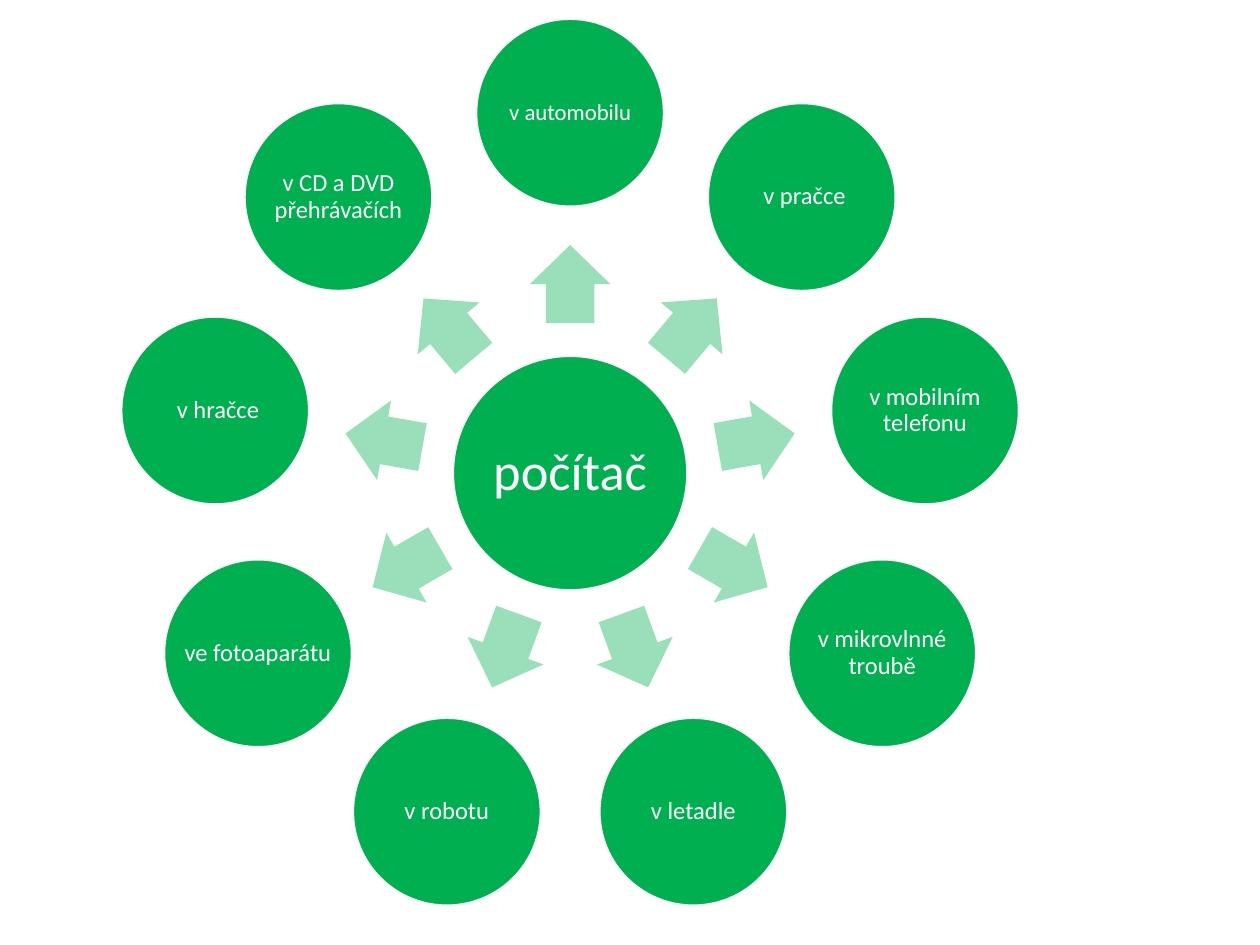
"""Radial diagram: a computer in the centre and nine places where one is found."""
from math import cos, radians, sin

from lxml import etree
from pptx import Presentation
from pptx.dml.color import RGBColor
from pptx.enum.shapes import MSO_SHAPE
from pptx.enum.text import MSO_ANCHOR, PP_ALIGN
from pptx.oxml.ns import qn
from pptx.util import Inches, Pt

OVAL = MSO_SHAPE.OVAL
RIGHT_ARROW = MSO_SHAPE.RIGHT_ARROW
MIDDLE = MSO_ANCHOR.MIDDLE
CENTER = PP_ALIGN.CENTER

COLORS = {"green": "00B050", "white": "FFFFFF"}
CENTER_X, CENTER_Y = 4.525, 3.755
PLACE_RADIUS, ARROW_RADIUS = 2.86, 1.5
ARROW_WIDTH, ARROW_HEIGHT = 0.62, 0.64

PLACES = [
    ("v automobilu", 13),
    (" v pračce", 14),
    ("v mobilním telefonu", 14),
    ("v mikrovlnné troubě", 14),
    ("v letadle", 14),
    ("v robotu", 14),
    ("ve fotoaparátu", 14),
    (" v hračce", 14),
    ("v CD a DVD přehrávačích", 14),
]

prs = Presentation()
prs.slide_width, prs.slide_height = Inches(10), Inches(7.5)
slide = prs.slides.add_slide(prs.slide_layouts[6])


def box_at(angle, radius, width, height):
    x = CENTER_X + radius * cos(radians(angle)) - width / 2
    y = CENTER_Y + radius * sin(radians(angle)) - height / 2
    return [Inches(length) for length in (x, y, width, height)]


def add_circle(label, box, size, inset):
    circle = slide.shapes.add_shape(OVAL, *box)
    circle.shadow.inherit = False
    circle.fill.solid()
    circle.fill.fore_color.rgb = RGBColor.from_string(COLORS["green"])
    circle.line.color.rgb = RGBColor.from_string(COLORS["white"])
    circle.line.width = Pt(2)

    frame = slide.shapes.add_textbox(*box).text_frame
    frame.word_wrap = True
    frame.vertical_anchor = MIDDLE
    frame.margin_left = frame.margin_right = Inches(inset)
    frame.margin_top = frame.margin_bottom = Inches(inset)
    frame.text = label
    paragraph = frame.paragraphs[0]
    paragraph.alignment = CENTER
    paragraph.line_spacing = 0.9
    font = paragraph.runs[0].font
    font.name = "Calibri"
    font.size = Pt(size)
    font.color.rgb = RGBColor.from_string(COLORS["white"])


add_circle("počítač", box_at(0, 0, 1.87, 1.87), 30, 0.04)

for index, (place, size) in enumerate(PLACES):
    angle = 270 + index * 360 / len(PLACES)
    arrow = slide.shapes.add_shape(
        RIGHT_ARROW, *box_at(angle, ARROW_RADIUS, ARROW_WIDTH, ARROW_HEIGHT))
    arrow.rotation = angle % 360
    arrow.adjustments[0] = 0.6
    arrow.adjustments[1] = 0.5
    arrow.shadow.inherit = False
    arrow.line.fill.background()
    arrow.fill.solid()
    arrow.fill.fore_color.rgb = RGBColor.from_string(COLORS["green"])
    tint = arrow.fill._xPr.find(qn("a:solidFill"))[0]
    etree.SubElement(tint, qn("a:alpha"), val="40000")

    add_circle(place, box_at(angle, PLACE_RADIUS, 1.5, 1.5), size, 0.02)

prs.save("out.pptx")
